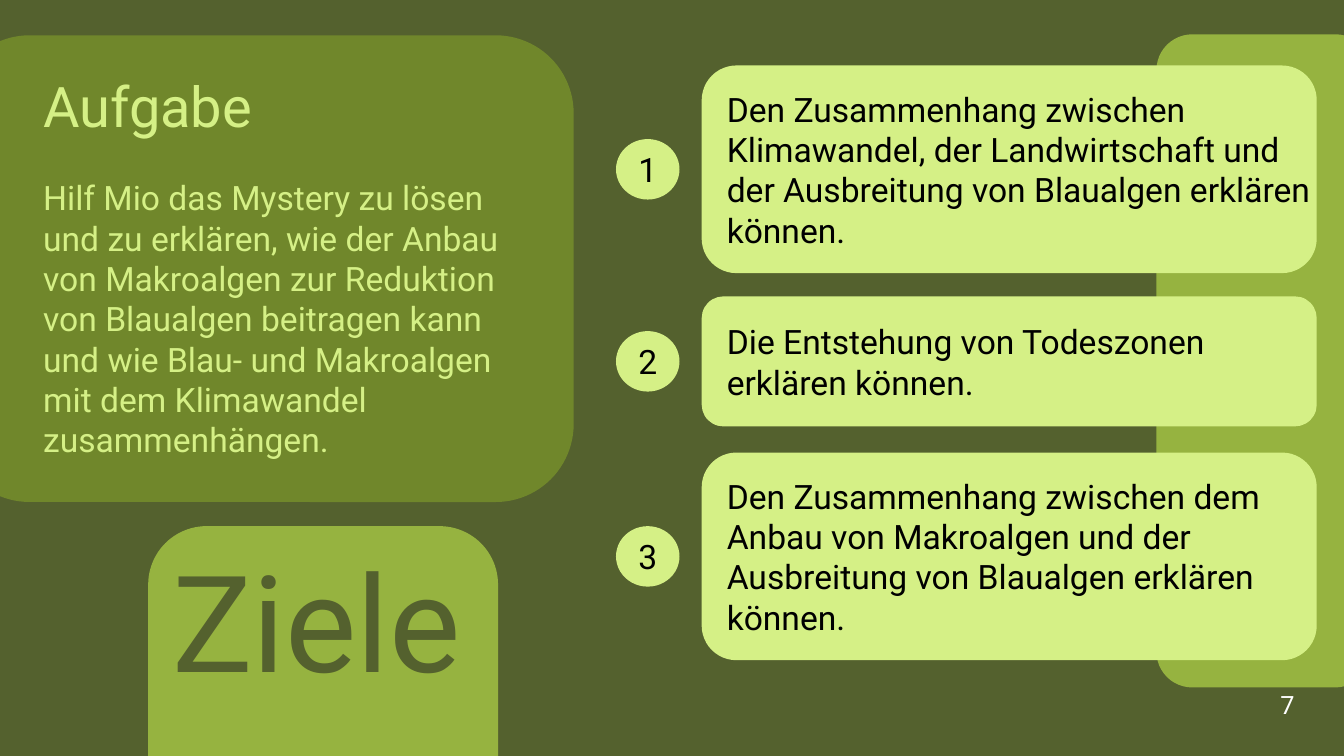
from pptx import Presentation
from pptx import util as u
from pptx.dml import color
from pptx.enum import shapes, text

COLORS = {
    "background": "54612E",
    "accent": "96B340",
    "light": "D5F086",
    "panel": "70872B",
    "black": "000000",
    "white": "FFFFFF",
}
FONT = "Roboto"
CORNER = 0.167
CARD_LEFT = 6.96
CARD_WIDTH = 6.1
CIRCLE_WIDTH, CIRCLE_HEIGHT = 0.63, 0.6
GOALS = [
    (0.65, 2.06, "Den Zusammenhang zwischen Klimawandel, der Landwirtschaft "
                 "und der Ausbreitung von Blaualgen erklären können."),
    (2.94, 1.29, "Die Entstehung von Todeszonen erklären können."),
    (4.49, 2.06, "Den Zusammenhang zwischen dem Anbau von Makroalgen "
                 "und der Ausbreitung von Blaualgen erklären können."),
]
TASK = ("Hilf Mio das Mystery zu lösen und zu erklären, wie der Anbau von "
        "Makroalgen zur Reduktion von Blaualgen beitragen kann und wie Blau- "
        "und Makroalgen mit dem Klimawandel zusammenhängen.")


def rgb(name):
    return color.RGBColor.from_string(COLORS[name])


def write(shape, wording, size, color_name, align=text.PP_ALIGN.LEFT,
          anchor=text.MSO_ANCHOR.TOP):
    frame = shape.text_frame
    frame.text = wording
    frame.word_wrap = True
    frame.auto_size = text.MSO_AUTO_SIZE.NONE
    frame.vertical_anchor = anchor
    paragraph = frame.paragraphs[0]
    paragraph.alignment = align
    paragraph.font.name = FONT
    paragraph.font.size = u.Pt(size)
    paragraph.font.color.rgb = rgb(color_name)


def add_filled(slide, kind, box, color_name):
    shape = slide.shapes.add_shape(kind, *map(u.Inches, box))
    shape.shadow.inherit = False
    shape.fill.solid()
    shape.fill.fore_color.rgb = rgb(color_name)
    shape.line.fill.background()
    return shape


def add_rounded(slide, box, color_name):
    shape = add_filled(slide, shapes.MSO_SHAPE.ROUNDED_RECTANGLE, box, color_name)
    shape.adjustments[0] = CORNER
    return shape


def add_label(slide, box, wording, size, color_name, anchor=text.MSO_ANCHOR.TOP):
    label = slide.shapes.add_textbox(*map(u.Inches, box))
    write(label, wording, size, color_name, anchor=anchor)


def add_goal(slide, number, top, height, wording):
    add_rounded(slide, (CARD_LEFT, top, CARD_WIDTH, height), "light")
    add_label(slide, (CARD_LEFT + 0.15, top, 6.05, height), wording, 24, "black",
              text.MSO_ANCHOR.MIDDLE)
    circle_top = top + (height - CIRCLE_HEIGHT) / 2
    circle = add_filled(slide, shapes.MSO_SHAPE.FLOWCHART_CONNECTOR,
                        (6.11, circle_top, CIRCLE_WIDTH, CIRCLE_HEIGHT), "light")
    frame = circle.text_frame
    frame.margin_left = frame.margin_right = 0
    frame.margin_top = frame.margin_bottom = 0
    write(circle, str(number), 24, "black", text.PP_ALIGN.CENTER,
          text.MSO_ANCHOR.MIDDLE)


def place_title(slide, box, wording):
    title = slide.shapes.title
    title.left, title.top, title.width, title.height = map(u.Inches, box)
    write(title, wording, 40, "light")
    title.element.getparent().append(title.element)


def main():
    presentation = Presentation()
    presentation.slide_width = u.Inches(13.33)
    presentation.slide_height = u.Inches(7.5)
    slide = presentation.slides.add_slide(presentation.slide_layouts[5])
    slide.background.fill.solid()
    slide.background.fill.fore_color.rgb = rgb("background")

    add_rounded(slide, (11.47, 0.34, 2.13, 6.48), "accent")
    for number, goal in enumerate(GOALS, start=1):
        add_goal(slide, number, *goal)

    add_rounded(slide, (1.47, 5.22, 3.47, 3.97), "accent")
    task_panel = add_rounded(slide, (0.29, -0.42, 4.63, 6.17), "panel")
    task_panel.rotation = 270
    place_title(slide, (0.33, 0.66, 5.08, 0.8), "Aufgabe")
    add_label(slide, (0.33, 1.71, 5.08, 3.36), TASK, 24, "light")
    add_label(slide, (1.61, 5.29, 3.5, 1.7), "Ziele", 96, "background")
    add_label(slide, (12.6, 6.79, 0.48, 0.41), "7", 18, "white")

    presentation.save("out.pptx")


if __name__ == "__main__":
    main()
